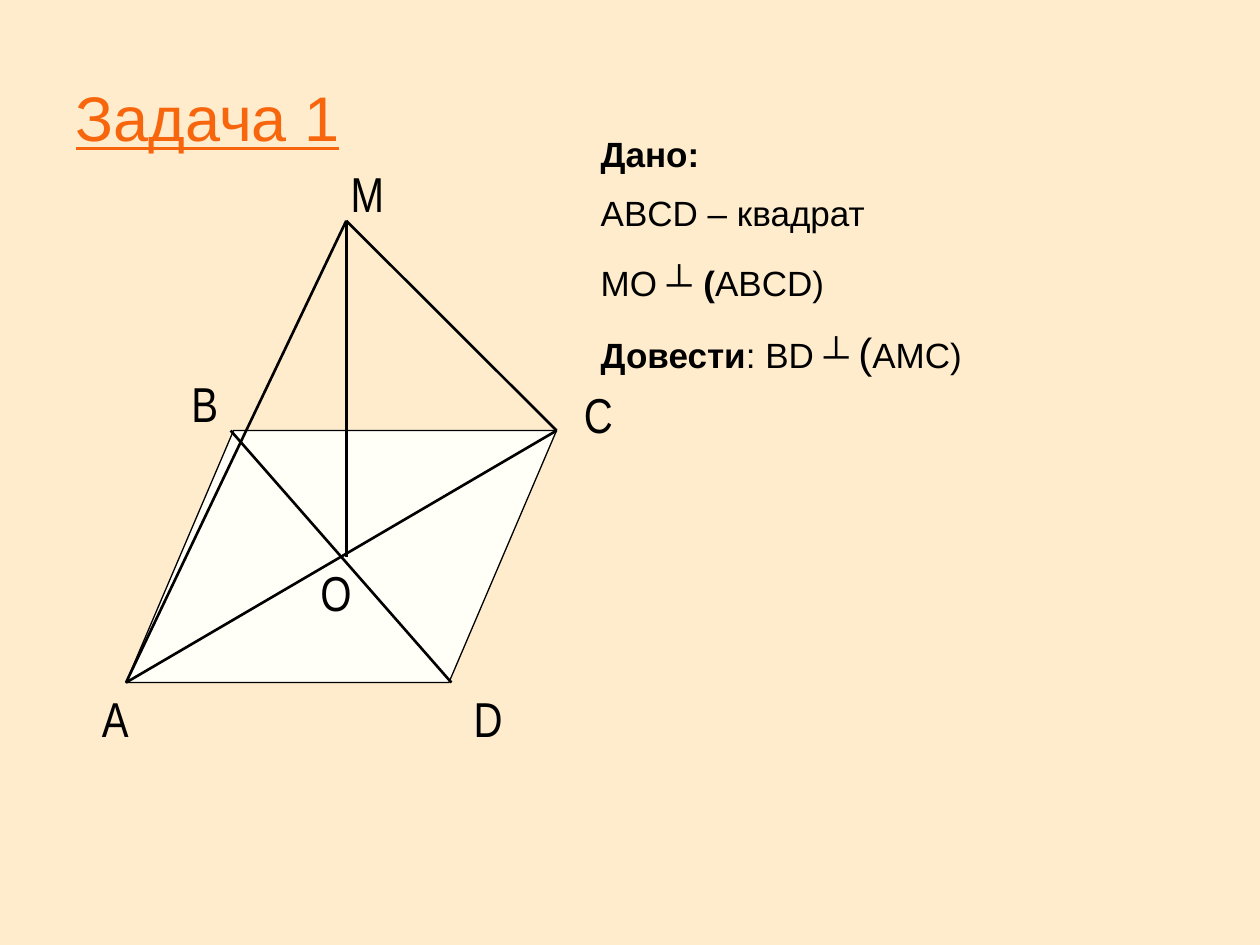
from pptx import Presentation
from pptx.dml.color import RGBColor
from pptx.enum.shapes import MSO_CONNECTOR, MSO_SHAPE
from pptx.enum.text import MSO_ANCHOR, PP_ALIGN
from pptx.oxml.ns import qn
from pptx.util import Cm, Pt
from lxml.etree import SubElement

COLORS = {"background": "FEECCD", "title": "F7660D", "base": "FFFFF7", "ink": "000000"}

# Vertices of the pyramid, in centimetres
VERTICES = {
    "A": (2.54, 13.76), "B": (4.65, 8.68), "C": (11.22, 8.68),
    "D": (9.1, 13.76), "M": (6.98, 4.45), "O": (6.98, 11.22),
}
EDGES = ["AC", "BD", "MO", "MC", "MA"]

# Letter, left, top and width of each vertex label, in centimetres
LABELS = [
    ("О", 6.14, 11.22, 1.27), ("А", 1.69, 13.76, 1.27), ("В", 3.6, 7.41, 1.06),
    ("С", 11.43, 7.62, 1.27), ("D", 8.89, 13.76, 1.9), ("M", 6.77, 3.18, 1.27),
]
LABEL_HEIGHT = 1.45

# Each line of the problem is a list of (text, bold, size)
PROBLEM = [
    [("Дано:", True, 20)],
    [("АBCD – квадрат", False, 20)],
    [("МО ", False, 20), ("┴", True, 20), (" ", True, 24), ("(", True, 20),
     ("АBCD)", False, 20)],
    [("Довести", True, 20), (": ВD ", False, 20), ("┴ ", True, 20),
     ("(", False, 24), ("АМС)", False, 20)],
]


def rgb(name):
    return RGBColor.from_string(COLORS[name])


def write(paragraph, text, size, font="Arial", color="ink", bold=False, underline=False):
    run = paragraph.add_run()
    run.text = text
    run.font.size = Pt(size)
    run.font.name = font
    run.font.color.rgb = rgb(color)
    run.font.bold = bold
    run.font.underline = underline


def space_half_line(paragraph):
    """Space before the paragraph: half of its own line height."""
    before = SubElement(paragraph._p.get_or_add_pPr(), qn("a:spcBef"))
    SubElement(before, qn("a:spcPct")).set("val", "50000")


def add_text_frame(slide, left, top, width, height):
    frame = slide.shapes.add_textbox(Cm(left), Cm(top), Cm(width), Cm(height)).text_frame
    frame.word_wrap = True
    return frame


def add_title(slide, text):
    title = slide.shapes.title
    title.left, title.top, title.width, title.height = Cm(1.27), Cm(0.76), Cm(22.86), Cm(3.18)
    title.text_frame.vertical_anchor = MSO_ANCHOR.MIDDLE
    heading = title.text_frame.paragraphs[0]
    heading.alignment = PP_ALIGN.LEFT
    write(heading, text, 36, color="title", underline=True)


def add_base(slide):
    left, bottom = VERTICES["A"]
    right, top = VERTICES["C"]
    base = slide.shapes.add_shape(
        MSO_SHAPE.PARALLELOGRAM, Cm(left), Cm(top), Cm(right - left), Cm(bottom - top))
    base.adjustments[0] = 0.427
    base.shadow.inherit = False
    base.fill.solid()
    base.fill.fore_color.rgb = rgb("base")
    base.line.color.rgb = rgb("ink")
    base.line.width = Pt(0.75)


def add_edge(slide, start, end):
    ends = [Cm(value) for value in VERTICES[start] + VERTICES[end]]
    edge = slide.shapes.add_connector(MSO_CONNECTOR.STRAIGHT, *ends)
    edge.line.color.rgb = rgb("ink")
    edge.line.width = Pt(1.5)
    SubElement(edge._element.spPr, qn("a:effectLst"))


def add_label(slide, letter, left, top, width):
    label = add_text_frame(slide, left, top, width, LABEL_HEIGHT).paragraphs[0]
    label.alignment = PP_ALIGN.CENTER
    write(label, letter, 28, font="Arial Narrow")


def add_problem(slide):
    frame = add_text_frame(slide, 11.86, 2.54, 11, 5.41)
    for index, pieces in enumerate(PROBLEM):
        statement = frame.add_paragraph() if index else frame.paragraphs[0]
        space_half_line(statement)
        for text, bold, size in pieces:
            write(statement, text, size, bold=bold)


def main():
    deck = Presentation()
    deck.slide_width, deck.slide_height = Cm(25.4), Cm(19.05)
    slide = deck.slides.add_slide(deck.slide_layouts[5])
    slide.background.fill.solid()
    slide.background.fill.fore_color.rgb = rgb("background")

    add_title(slide, "Задача 1")

    # Pyramid drawing
    add_base(slide)
    for start, end in EDGES:
        add_edge(slide, start, end)
    for label in LABELS:
        add_label(slide, *label)

    # Given facts and the claim to prove
    add_problem(slide)

    deck.save("out.pptx")


if __name__ == "__main__":
    main()
